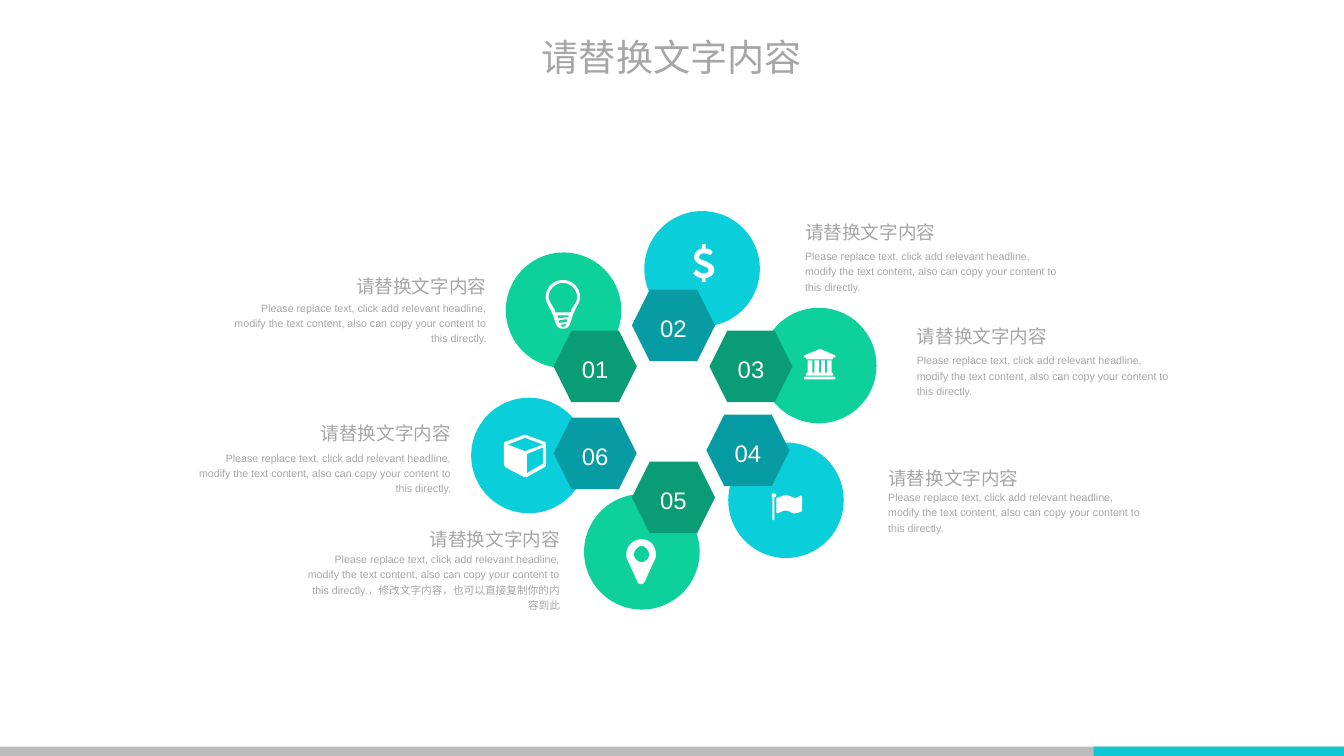
import dataclasses

import pptx
import pptx.dml.color
import pptx.enum.shapes
import pptx.enum.text
import pptx.util

Cm = pptx.util.Cm
Shapes = pptx.enum.shapes.MSO_SHAPE
Align = pptx.enum.text.PP_ALIGN
Anchor = pptx.enum.text.MSO_ANCHOR


@dataclasses.dataclass(frozen=True)
class Theme:
    font: str = "Arial"
    text: str = "A6A6A6"
    white: str = "FFFFFF"
    bar: str = "BCBCBC"
    accent: str = "0FC7D3"
    circles: tuple = ("0ACEDA", "0DD09B")
    hexagons: tuple = ("079BA4", "0A9C74")
    title_size: int = 28
    number_size: int = 18
    heading_size: int = 14
    body_size: int = 8


HEADING = "请替换文字内容"
BODY = ("Please replace text, click add relevant headline, modify the text content, "
        "also can copy your content to this directly.")
BODY_EXTRA = "，修改文字内容，也可以直接复制你的内容到此"

ICON_UNIT = 0.0254
CURVE_STEPS = 8
CIRCLE_SIZE = 3.07
HEXAGON_WIDTH, HEXAGON_HEIGHT = 2.21, 1.9
HEADING_WIDTH, BODY_WIDTH = 4.38, 6.75

BULB = [
    [(18, 0), (8, 0, 0, 8, 0, 18), (0, 24, 6, 31, 8, 38), (11, 46, 11, 51, 18, 51),
     (25, 51, 25, 47, 28, 38), (30, 31, 36, 24, 36, 18), (36, 8, 28, 0, 18, 0)],
    [(26, 34), (10, 34), (10, 32, 9, 30, 8, 29), (6, 25, 3, 21, 3, 18), (3, 10, 10, 3, 18, 3),
     (26, 3, 33, 10, 33, 18), (33, 21, 31, 25, 28, 29), (27, 30, 27, 32, 26, 34)],
    [(13, 40), (12, 37), (24, 37), (24, 39)],
    [(22, 44), (14, 45), (14, 42), (23, 41)],
    [(18, 49), (17, 49, 16, 48, 15, 47), (22, 46), (21, 48, 20, 49, 18, 49)],
]
DOLLAR = [
    [(13, 36), (13, 40), (9, 40), (9, 36), (3, 35, 1, 32, 1, 32), (0, 31), (3, 27),
     (4, 28, 7, 31, 11, 31), (13, 31, 16, 30, 16, 27), (16, 25, 13, 24, 10, 23),
     (6, 21, 1, 19, 1, 14), (1, 9, 4, 6, 9, 5), (9, 0), (13, 0), (13, 5),
     (18, 5, 20, 8, 20, 8), (20, 9), (18, 12), (18, 12, 15, 10, 11, 10),
     (8, 10, 6, 12, 6, 14), (6, 16, 9, 17, 13, 18), (16, 20, 22, 22, 22, 27),
     (22, 32, 18, 35, 13, 36)],
]
BANK = [
    [(33, 7), (33, 9), (31, 9), (30, 11), (3, 11), (2, 9), (0, 9), (0, 7), (17, 0)],
    [(33, 30), (33, 32), (0, 32), (0, 30), (1, 29), (32, 29)],
    [(9, 12), (9, 25), (11, 25), (11, 12), (16, 12), (16, 25), (18, 25), (18, 12),
     (22, 12), (22, 25), (24, 25), (24, 12), (29, 12), (29, 25), (30, 25), (31, 27),
     (31, 28), (2, 28), (2, 27), (3, 25), (4, 25), (4, 12)],
]
FLAG = [
    [(3, 4), (3, 28), (1, 28), (1, 4), (0, 4, 0, 3, 0, 2), (0, 1, 1, 0, 2, 0),
     (3, 0, 5, 1, 5, 2), (5, 3, 4, 4, 3, 4)],
    [(32, 18), (32, 18, 32, 19, 31, 19), (29, 20, 26, 21, 24, 21), (21, 21, 19, 18, 15, 18),
     (12, 18, 9, 20, 6, 21), (5, 20), (5, 5), (7, 4), (9, 4, 12, 2, 15, 2),
     (18, 2, 19, 3, 22, 4), (23, 4, 23, 5, 24, 5), (27, 5, 30, 2, 31, 2), (32, 4)],
]
PIN = [
    [(30, 21), (19, 45), (18, 46, 17, 47, 16, 47), (14, 47, 12, 46, 12, 45), (1, 21),
     (0, 20, 0, 17, 0, 16), (0, 7, 7, 0, 16, 0), (25, 0, 31, 7, 31, 16),
     (31, 17, 31, 20, 30, 21)],
    [(16, 7), (12, 7, 8, 12, 8, 16), (8, 20, 12, 24, 16, 24), (20, 24, 24, 20, 24, 16),
     (24, 12, 20, 7, 16, 7)],
]
CUBE = [
    [(44, 30), (44, 32, 44, 33, 42, 34), (24, 44), (21, 44), (2, 34), (1, 33, 0, 32, 0, 30),
     (0, 10), (0, 8, 1, 7, 2, 7), (21, 0), (23, 0), (42, 7), (44, 7, 44, 8, 44, 10)],
    [(41, 10), (22, 3), (4, 10), (22, 17)],
    [(41, 30), (41, 13), (24, 20), (24, 40)],
]


@dataclasses.dataclass(frozen=True)
class Step:
    circle: tuple
    hexagon: tuple
    icon: list
    icon_at: tuple
    text_edge: float
    heading_top: float
    body_top: float
    align: Align = Align.LEFT
    body: str = BODY
    body_height: float = 1.19


STEPS = [
    Step((13.44, 6.71), (14.71, 8.79), BULB, (14.5, 7.44), 12.93, 7.19, 7.95, Align.RIGHT),
    Step((17.12, 5.61), (16.79, 7.7), DOLLAR, (18.42, 6.48), 21.39, 5.74, 6.58),
    Step((20.22, 8.18), (18.85, 8.79), BANK, (21.36, 9.27), 24.36, 8.51, 9.35),
    Step((19.35, 11.76), (18.77, 11.02), FLAG, (20.5, 13.11), 23.6, 12.29, 12.98),
    Step((15.52, 13.13), (16.79, 12.27), PIN, (16.64, 14.33), 14.88, 13.92, 14.63,
         Align.RIGHT, BODY + BODY_EXTRA, 1.65),
    Step((12.52, 10.57), (14.71, 11.1), CUBE, (13.39, 11.56), 11.99, 11.1, 11.94, Align.RIGHT),
]


def flatten(contour):
    points = [contour[0]]
    for segment in contour[1:]:
        if len(segment) == 2:
            points.append(segment)
            continue
        start, controls = points[-1], (segment[:2], segment[2:4], segment[4:])
        for step in range(1, CURVE_STEPS + 1):
            t = step / CURVE_STEPS
            weights = ((1 - t) ** 3, 3 * t * (1 - t) ** 2, 3 * t ** 2 * (1 - t), t ** 3)
            corners = (start, *controls)
            points.append(tuple(sum(weight * corner[axis] for weight, corner in zip(weights, corners))
                                for axis in (0, 1)))
    return [tuple(Cm(value * ICON_UNIT) for value in point) for point in points]


class SlideBuilder:
    """Draws styled elements on the current slide."""

    def __init__(self, slide, theme):
        self.slide = slide
        self.theme = theme

    def paint(self, shape, color):
        shape.shadow.inherit = False
        shape.fill.solid()
        shape.fill.fore_color.rgb = pptx.dml.color.RGBColor.from_string(color)
        shape.line.fill.background()

    def set_text(self, shape, text, size, color, align, spacing=1.2):
        shape.text_frame.text = text
        paragraph = shape.text_frame.paragraphs[0]
        paragraph.alignment = align
        paragraph.line_spacing = spacing
        font = paragraph.runs[0].font
        font.name = self.theme.font
        font.size = pptx.util.Pt(size)
        font.color.rgb = pptx.dml.color.RGBColor.from_string(color)

    def fit(self, shape):
        frame = shape.text_frame
        frame.margin_left = frame.margin_right = frame.margin_top = frame.margin_bottom = 0
        frame.vertical_anchor = Anchor.TOP
        frame.word_wrap = True
        frame.auto_size = pptx.enum.text.MSO_AUTO_SIZE.SHAPE_TO_FIT_TEXT

    def title(self, text, left, top, width, height):
        shape = self.slide.shapes.title
        shape.left, shape.top, shape.width, shape.height = map(Cm, (left, top, width, height))
        self.set_text(shape, text, self.theme.title_size, self.theme.text, Align.CENTER, 1.3)
        self.fit(shape)

    def shape(self, kind, left, top, width, height, color):
        shape = self.slide.shapes.add_shape(kind, Cm(left), Cm(top), Cm(width), Cm(height))
        self.paint(shape, color)
        return shape

    def hexagon(self, number, left, top, color):
        shape = self.shape(Shapes.HEXAGON, left, top, HEXAGON_WIDTH, HEXAGON_HEIGHT, color)
        self.set_text(shape, number, self.theme.number_size, self.theme.white, Align.CENTER)
        shape.text_frame.vertical_anchor = Anchor.MIDDLE

    def icon(self, contours, left, top):
        outlines = [flatten(contour) for contour in contours]
        builder = self.slide.shapes.build_freeform(*outlines[0][0])
        builder.add_line_segments(outlines[0][1:])
        for outline in outlines[1:]:
            builder.move_to(*outline[0])
            builder.add_line_segments(outline[1:])
        self.paint(builder.convert_to_shape(Cm(left), Cm(top)), self.theme.white)

    def text(self, text, edge, top, width, height, size, align):
        left = edge - width if align == Align.RIGHT else edge
        box = self.slide.shapes.add_textbox(Cm(left), Cm(top), Cm(width), Cm(height))
        self.set_text(box, text, size, self.theme.text, align)
        self.fit(box)


def main():
    presentation = pptx.Presentation()
    presentation.slide_width, presentation.slide_height = Cm(35.71), Cm(20.09)
    theme = Theme()
    builder = SlideBuilder(presentation.slides.add_slide(presentation.slide_layouts[5]), theme)
    builder.title(HEADING, 13.89, 0.56, 7.92, 1.4)
    builder.shape(Shapes.RECTANGLE, 0, 19.84, 35.71, 0.25, theme.bar)
    builder.shape(Shapes.RECTANGLE, 29.06, 19.84, 6.65, 0.25, theme.accent)
    for number, step in enumerate(STEPS, 1):
        builder.shape(Shapes.OVAL, *step.circle, CIRCLE_SIZE, CIRCLE_SIZE, theme.circles[number % 2])
        builder.hexagon(f"{number:02}", *step.hexagon, theme.hexagons[number % 2])
        builder.icon(step.icon, *step.icon_at)
        builder.text(HEADING, step.text_edge, step.heading_top, HEADING_WIDTH, 0.71,
                     theme.heading_size, step.align)
        builder.text(step.body, step.text_edge, step.body_top, BODY_WIDTH, step.body_height,
                     theme.body_size, step.align)
    presentation.save("out.pptx")


if __name__ == "__main__":
    main()
